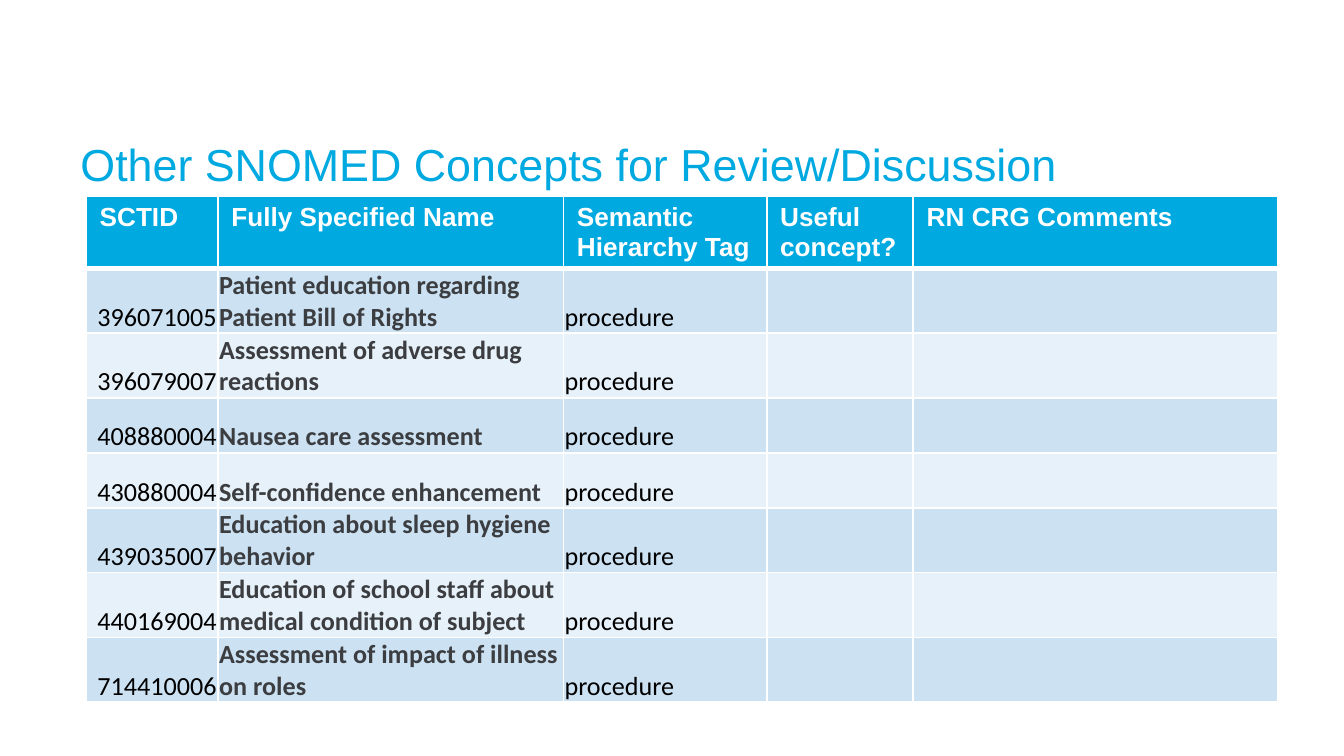
import pptx
import pptx.dml.color
import pptx.enum.text
import pptx.oxml.ns
import pptx.util
from lxml import etree

Cm = pptx.util.Cm
Pt = pptx.util.Pt
Align = pptx.enum.text.PP_ALIGN
Anchor = pptx.enum.text.MSO_ANCHOR

HUES = {
    "blue": "00A9E0",
    "white": "FFFFFF",
    "black": "000000",
    "gray": "3B3D40",
    "dark": "CCE2F3",
    "light": "E7F1F9",
}
COLS = [2.49, 6.53, 3.84, 2.77, 6.88]
ROWS = [1.04] * 7 + [0.81]
HEADS = ["SCTID", "Fully Specified Name", "Semantic Hierarchy Tag",
         "Useful concept?", "RN CRG Comments"]
ITEMS = [
    ("396071005", "Patient education regarding Patient Bill of Rights"),
    ("396079007", "Assessment of adverse drug reactions"),
    ("408880004", "Nausea care assessment"),
    ("430880004", "Self-confidence enhancement"),
    ("439035007", "Education about sleep hygiene behavior"),
    ("440169004", "Education of school staff about medical condition of subject"),
    ("714410006", "Assessment of impact of illness on roles"),
]
HEAD = {"name": "Arial", "size": Pt(14), "bold": True}
BODY = {"name": "Calibri", "size": Pt(14), "bold": False}
TIGHT = {
    "margin_left": Cm(0.02),
    "margin_right": Cm(0.02),
    "margin_top": Cm(0.02),
    "margin_bottom": 0,
    "vertical_anchor": Anchor.BOTTOM,
}
STYLES = [
    (BODY, "black", Align.RIGHT),
    (BODY | {"bold": True}, "gray", Align.LEFT),
    (BODY, "black", Align.LEFT),
]


def tint(hue):
    return pptx.dml.color.RGBColor.from_string(HUES[hue])


def apply(thing, form):
    for key, value in form.items():
        setattr(thing, key, value)


def write(frame, text, form, hue, align=Align.LEFT):
    frame.text = text
    para = frame.paragraphs[0]
    para.alignment = align
    font = para.runs[0].font
    apply(font, form)
    font.color.rgb = tint(hue)


def edge(cell, side, width):
    qn = pptx.oxml.ns.qn
    props = cell._tc.get_or_add_tcPr()
    line = etree.SubElement(props, qn(f"a:ln{side}"), w=str(Pt(width)))
    fill = etree.SubElement(line, qn("a:solidFill"))
    etree.SubElement(fill, qn("a:srgbClr"), val=HUES["white"])


def paint(cell, row):
    thick = {0: "B", 1: "T"}.get(row)
    for side in "LRTB":
        edge(cell, side, 3 if side == thick else 1)
    hue = "blue" if row == 0 else "dark" if row % 2 else "light"
    cell.fill.solid()
    cell.fill.fore_color.rgb = tint(hue)


def add_title(slide):
    title = slide.shapes.title
    apply(title, {"left": Cm(1.27), "top": Cm(2.31),
                  "width": Cm(22.86), "height": Cm(1.57)})
    frame = title.text_frame
    sides = ("left", "right", "top", "bottom")
    apply(frame, {f"margin_{side}": Cm(0.25) for side in sides})
    apply(frame, {"word_wrap": True, "vertical_anchor": Anchor.MIDDLE,
                  "auto_size": pptx.enum.text.MSO_AUTO_SIZE.NONE})
    write(frame, "Other SNOMED Concepts for Review/Discussion",
          {"name": "Arial", "size": Pt(24)}, "blue")


def add_grid(slide):
    grid = slide.shapes.add_table(
        len(ROWS), len(COLS), Cm(1.63), Cm(3.71),
        Cm(sum(COLS)), Cm(sum(ROWS))).table
    for col, width in zip(grid.columns, COLS):
        col.width = Cm(width)
    for row, height in zip(grid.rows, ROWS):
        row.height = Cm(height)
    for row in range(len(ROWS)):
        for col in range(len(COLS)):
            paint(grid.cell(row, col), row)
    for col, text in enumerate(HEADS):
        write(grid.cell(0, col).text_frame, text, HEAD, "white")
    for row, (code, name) in enumerate(ITEMS, 1):
        for col, text in enumerate((code, name, "procedure")):
            cell = grid.cell(row, col)
            apply(cell, TIGHT)
            write(cell.text_frame, text, *STYLES[col])


def main():
    deck = pptx.Presentation()
    apply(deck, {"slide_width": Cm(25.4), "slide_height": Cm(14.29)})
    slide = deck.slides.add_slide(deck.slide_layouts[5])
    add_title(slide)
    add_grid(slide)
    deck.save("out.pptx")


if __name__ == "__main__":
    main()
